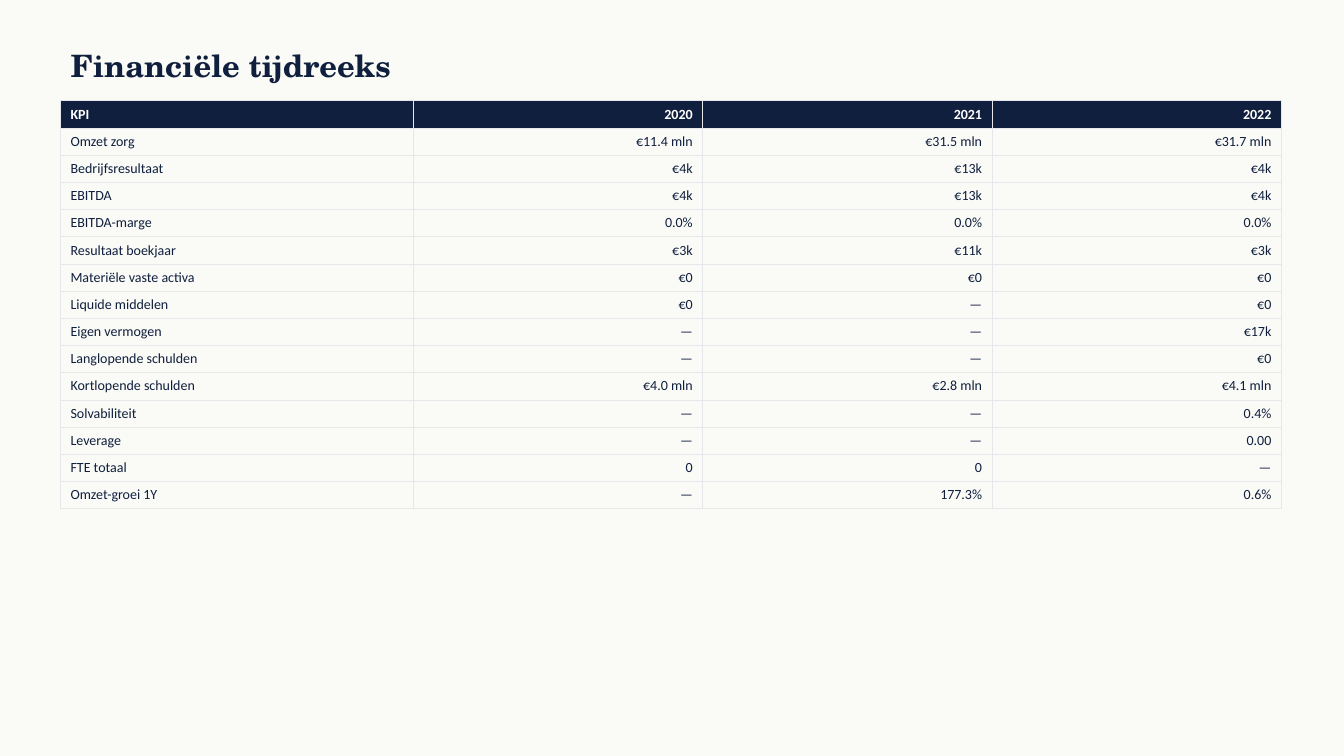
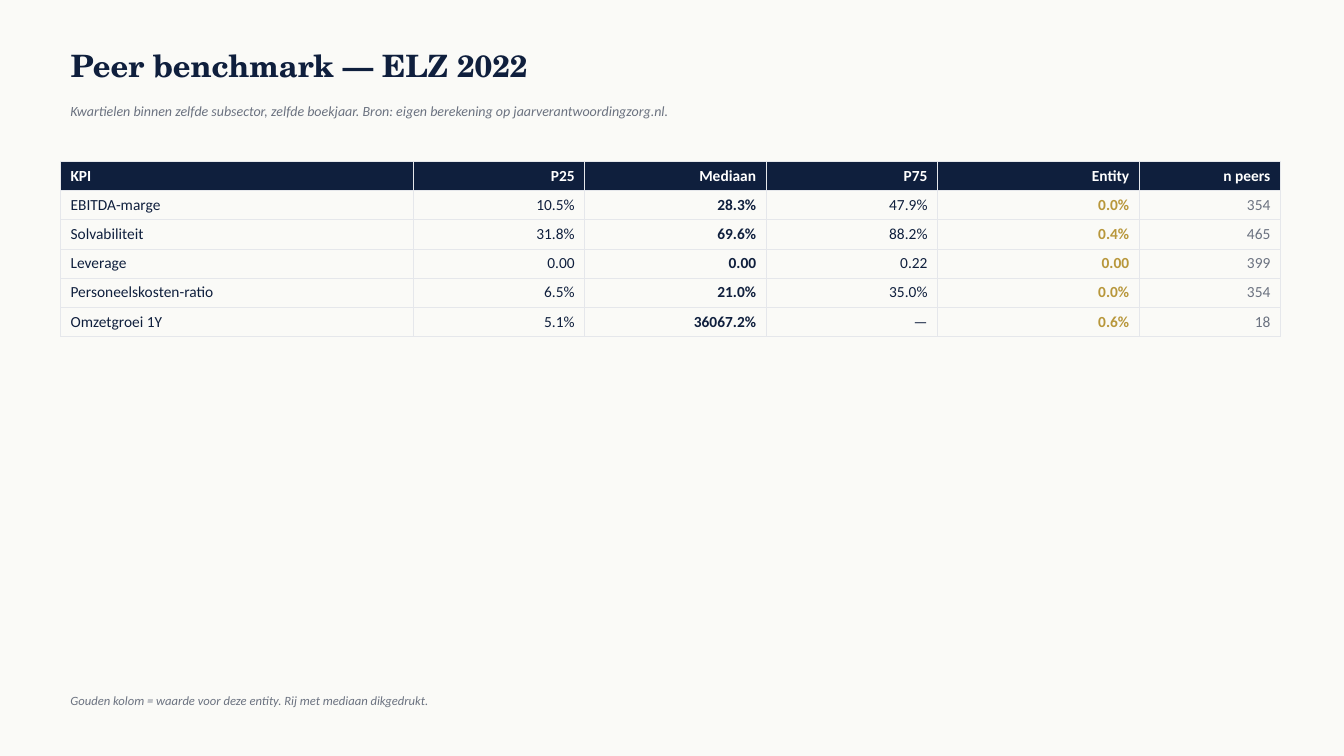
from lxml import etree
from pptx import Presentation
from pptx import util as u
from pptx.dml import color
from pptx.enum import text
from pptx.oxml import ns

NAVY, GOLD, GRAY = "0F1F3D", "B8973B", "6B7280"
WHITE, PAPER, RULE = "FFFFFF", "FAFAF7", "E5E7EB"
SERIF, SANS = "TeX Gyre Schola", "Calibri"
LEFT, WIDE = 0.6, 12

YEARS = [
    ("KPI", "2020", "2021", "2022"),
    ("Omzet zorg", "€11.4 mln", "€31.5 mln", "€31.7 mln"),
    ("Bedrijfsresultaat", "€4k", "€13k", "€4k"),
    ("EBITDA", "€4k", "€13k", "€4k"),
    ("EBITDA-marge", "0.0%", "0.0%", "0.0%"),
    ("Resultaat boekjaar", "€3k", "€11k", "€3k"),
    ("Materiële vaste activa", "€0", "€0", "€0"),
    ("Liquide middelen", "€0", "—", "€0"),
    ("Eigen vermogen", "—", "—", "€17k"),
    ("Langlopende schulden", "—", "—", "€0"),
    ("Kortlopende schulden", "€4.0 mln", "€2.8 mln", "€4.1 mln"),
    ("Solvabiliteit", "—", "—", "0.4%"),
    ("Leverage", "—", "—", "0.00"),
    ("FTE totaal", "0", "0", "—"),
    ("Omzet-groei 1Y", "—", "177.3%", "0.6%"),
]
PEERS = [
    ("KPI", "P25", "Mediaan", "P75", "Entity", "n peers"),
    ("EBITDA-marge", "10.5%", "28.3%", "47.9%", "0.0%", "354"),
    ("Solvabiliteit", "31.8%", "69.6%", "88.2%", "0.4%", "465"),
    ("Leverage", "0.00", "0.00", "0.22", "0.00", "399"),
    ("Personeelskosten-ratio", "6.5%", "21.0%", "35.0%", "0.0%", "354"),
    ("Omzetgroei 1Y", "5.1%", "36067.2%", "—", "0.6%", "18"),
]
MARKS = {2: (NAVY, True), 4: (GOLD, True), 5: (GRAY, False)}


def paint(part, tone):
    part.solid()
    part.fore_color.rgb = color.RGBColor.from_string(tone)


def write(frame, words, size, tone, face=SANS, bold=False, slant=False, side="LEFT"):
    line = frame.paragraphs[0]
    line.alignment = getattr(text.PP_ALIGN, side)
    run = line.add_run()
    run.text = words
    font = run.font
    font.name, font.size = face, u.Pt(size)
    font.bold, font.italic = bold, slant
    paint(font.fill, tone)


def place(shape, box):
    shape.left, shape.top, shape.width, shape.height = map(u.Inches, box)
    frame = shape.text_frame
    frame.word_wrap = True
    frame.auto_size = text.MSO_AUTO_SIZE.NONE
    frame.vertical_anchor = text.MSO_ANCHOR.MIDDLE
    return frame


def start(deck, title):
    slide = deck.slides.add_slide(deck.slide_layouts[5])
    frame = place(slide.shapes.title, (LEFT, 0.4, WIDE, 0.5))
    write(frame, title, 22, NAVY, SERIF, bold=True)
    return slide


def note(slide, top, words, size):
    box = [LEFT, top, WIDE, 0.3]
    shape = slide.shapes.add_textbox(*map(u.Inches, box))
    write(place(shape, box), words, size, GRAY, slant=True)


def edge(cell):
    props = cell._tc.get_or_add_tcPr()
    for spot, tag in enumerate(("a:lnL", "a:lnR", "a:lnT", "a:lnB")):
        line = etree.Element(ns.qn(tag), w=str(u.Pt(0.5)))
        fill = etree.SubElement(line, ns.qn("a:solidFill"))
        etree.SubElement(fill, ns.qn("a:srgbClr"), val=RULE)
        props.insert(spot, line)


def grid(slide, top, rows, cols, high, size, marks):
    box = LEFT, top, sum(cols), high * len(rows)
    frame = slide.shapes.add_table(len(rows), len(cols), *map(u.Inches, box))
    table = frame.table
    table.first_row = table.horz_banding = False
    for col, wide in zip(table.columns, cols):
        col.width = u.Inches(wide)
    for r, row in enumerate(rows):
        table.rows[r].height = u.Inches(high)
        for c, words in enumerate(row):
            cell = table.cell(r, c)
            if r == 0:
                paint(cell.fill, NAVY)
                tone, bold = WHITE, True
            else:
                cell.fill.background()
                tone, bold = marks.get(c, (NAVY, False))
            edge(cell)
            write(cell.text_frame, words, size, tone, bold=bold,
                  side="RIGHT" if c else "LEFT")


def trend(deck):
    slide = start(deck, "Financiële tijdreeks")
    grid(slide, 1, YEARS, [3.5] + [2.87] * 3, 0.27, 10, {})


def bench(deck):
    slide = start(deck, "Peer benchmark — ELZ 2022")
    note(slide, 0.95, "Kwartielen binnen zelfde subsector, zelfde boekjaar. "
         "Bron: eigen berekening op jaarverantwoordingzorg.nl.", 10)
    grid(slide, 1.6, PEERS, [3.5, 1.7, 1.8, 1.7, 2, 1.4], 0.29, 11, MARKS)
    note(slide, 6.8, "Gouden kolom = waarde voor deze entity. "
         "Rij met mediaan dikgedrukt.", 9)


def main():
    deck = Presentation()
    deck.slide_width, deck.slide_height = u.Inches(13.33), u.Inches(7.5)
    paint(deck.slide_master.background.fill, PAPER)
    trend(deck)
    bench(deck)
    deck.save("out.pptx")


if __name__ == "__main__":
    main()
